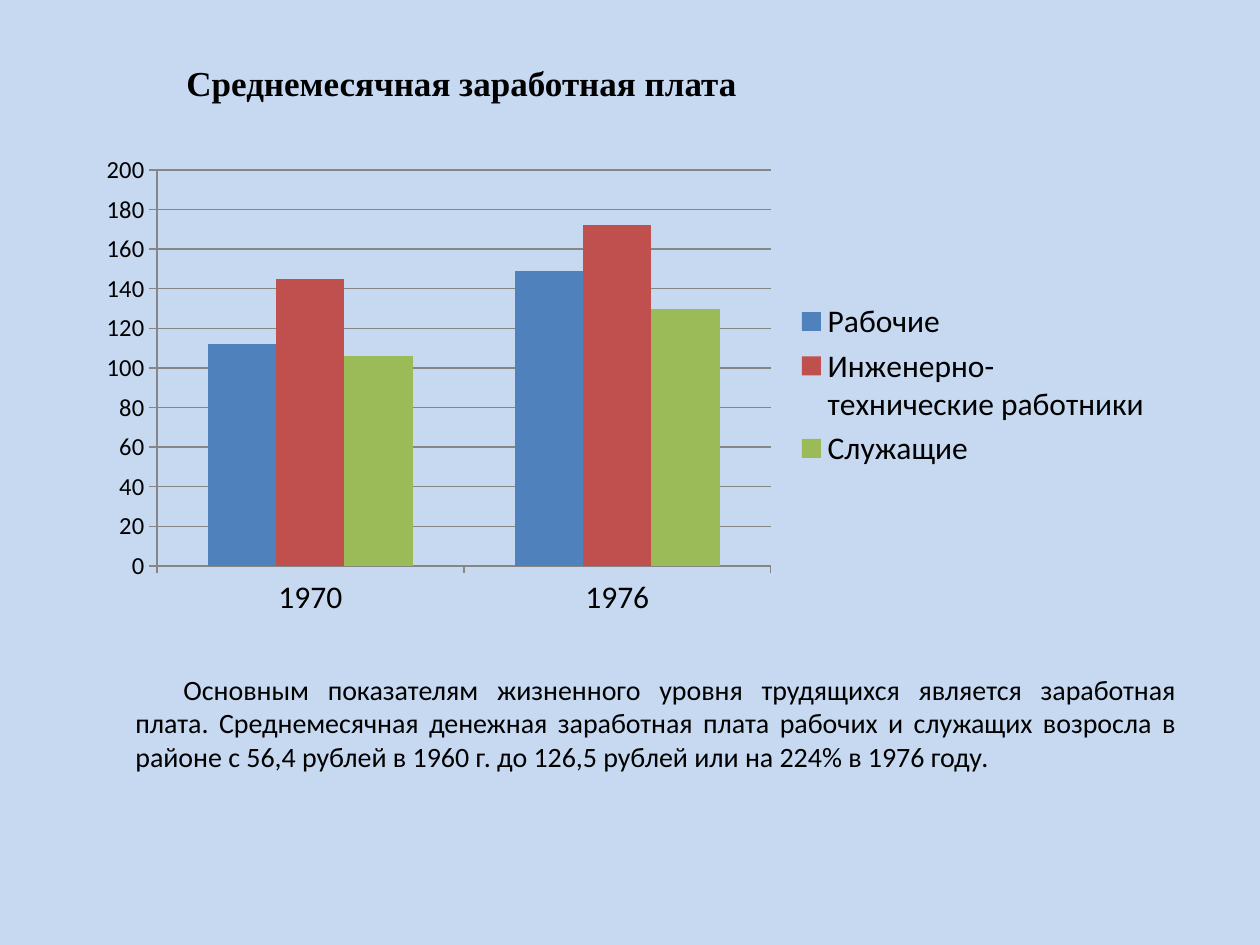
import dataclasses

import pptx
import pptx.chart.data
import pptx.dml.color
import pptx.enum.chart
import pptx.enum.text
import pptx.oxml
import pptx.oxml.ns
import pptx.util

EMU_PER_PX = 914400 // 126


def px(length):
    return pptx.util.Emu(length * EMU_PER_PX)


def rgb(value):
    return pptx.dml.color.RGBColor.from_string(value)


@dataclasses.dataclass(frozen=True)
class Theme:
    background: str = "C6D9F1"
    ink: str = "000000"
    grid: str = "868686"
    series: tuple = ("4F81BD", "C0504D", "9BBB59")
    heading_font: str = "Times New Roman"
    body_font: str = "Calibri"
    heading_size: int = 20
    body_size: int = 16
    label_size: int = 18
    scale_size: int = 14


class SlideBuilder:
    def __init__(self, slide, theme):
        self.slide = slide
        self.theme = theme
        slide.background.fill.solid()
        slide.background.fill.fore_color.rgb = rgb(theme.background)

    def style_font(self, font, name, size, bold=False):
        font.name = name
        font.size = pptx.util.Pt(size)
        font.bold = bold
        font.color.rgb = rgb(self.theme.ink)

    def text(self, box, wording, anchor):
        """Add a wrapping text box and return its paragraph for styling."""
        frame = self.slide.shapes.add_textbox(*map(px, box)).text_frame
        frame.word_wrap = True
        frame.vertical_anchor = anchor
        paragraph = frame.paragraphs[0]
        paragraph.text = wording
        return paragraph

    def heading(self, box, wording):
        paragraph = self.text(box, wording, pptx.enum.text.MSO_ANCHOR.TOP)
        self.style_font(paragraph.font, self.theme.heading_font, self.theme.heading_size, True)

    def body(self, box, wording, indent):
        paragraph = self.text(box, wording, pptx.enum.text.MSO_ANCHOR.MIDDLE)
        paragraph.alignment = pptx.enum.text.PP_ALIGN.JUSTIFY
        self.style_font(paragraph.font, self.theme.body_font, self.theme.body_size)
        paragraph._p.get_or_add_pPr().set("indent", str(px(indent)))

    def column_chart(self, box, plot_box, categories, series):
        data = pptx.chart.data.CategoryChartData()
        data.categories = categories
        for name, values in series.items():
            data.add_series(name, values)
        chart = self.slide.shapes.add_chart(
            pptx.enum.chart.XL_CHART_TYPE.COLUMN_CLUSTERED, *map(px, box), data
        ).chart
        theme = self.theme
        chart.has_title = False
        self.style_font(chart.font, theme.body_font, theme.label_size)

        plot = chart.plots[0]
        plot.gap_width = 150
        plot.overlap = 0
        plot.vary_by_categories = False
        for column, color in zip(plot.series, theme.series):
            column.format.fill.solid()
            column.format.fill.fore_color.rgb = rgb(color)

        chart.has_legend = True
        chart.legend.position = pptx.enum.chart.XL_LEGEND_POSITION.RIGHT
        chart.legend.include_in_layout = False
        self.style_font(chart.legend.font, theme.body_font, theme.label_size)

        self.axis(chart.category_axis, theme.label_size)
        scale = chart.value_axis
        self.axis(scale, theme.scale_size)
        scale.minimum_scale, scale.maximum_scale, scale.major_unit = 0, 200, 20
        scale.has_major_gridlines = True
        self.line(scale.major_gridlines.format.line)
        self.place_plot(chart, box, plot_box)

    def axis(self, axis, size):
        axis.major_tick_mark = pptx.enum.chart.XL_TICK_MARK.OUTSIDE
        axis.minor_tick_mark = pptx.enum.chart.XL_TICK_MARK.NONE
        self.style_font(axis.tick_labels.font, self.theme.body_font, size)
        self.line(axis.format.line)

    def line(self, line):
        line.color.rgb = rgb(self.theme.grid)
        line.width = pptx.util.Pt(0.75)

    def place_plot(self, chart, box, plot_box):
        """Fix the inner plot area, given in slide px, within the chart box."""
        left, top, width, height = box
        x, y, w, h = plot_box
        shares = {
            "x": (x - left) / width,
            "y": (y - top) / height,
            "w": w / width,
            "h": h / height,
        }
        modes = '<c:layoutTarget val="inner"/><c:xMode val="edge"/><c:yMode val="edge"/>'
        sizes = "".join(f'<c:{key} val="{share:.4f}"/>' for key, share in shares.items())
        layout = pptx.oxml.parse_xml(
            f'<c:layout {pptx.oxml.ns.nsdecls("c")}>'
            f"<c:manualLayout>{modes}{sizes}</c:manualLayout></c:layout>"
        )
        plot_area = chart._chartSpace.chart.plotArea
        for automatic in plot_area.findall(pptx.oxml.ns.qn("c:layout")):
            plot_area.remove(automatic)
        plot_area.insert(0, layout)


def main():
    presentation = pptx.Presentation()
    presentation.slide_width = px(1260)
    presentation.slide_height = px(945)
    slide = presentation.slides.add_slide(presentation.slide_layouts[6])
    builder = SlideBuilder(slide, Theme())

    builder.heading((174, 55, 740, 97), "Среднемесячная заработная плата")
    builder.column_chart(
        box=(84, 145, 1081, 480),
        plot_box=(157, 170, 614, 396),
        categories=["1970", "1976"],
        series={
            "Рабочие": (112, 149),
            "Инженерно-технические работники": (145, 172),
            "Служащие": (106, 130),
        },
    )
    builder.body(
        (123, 665, 1066, 115),
        "Основным показателям жизненного уровня трудящихся является заработная плата. "
        "Среднемесячная денежная заработная плата рабочих и служащих возросла в районе "
        "с 56,4 рублей в 1960 г. до 126,5 рублей или на 224% в 1976 году.",
        indent=48,
    )
    presentation.save("out.pptx")


if __name__ == "__main__":
    main()
